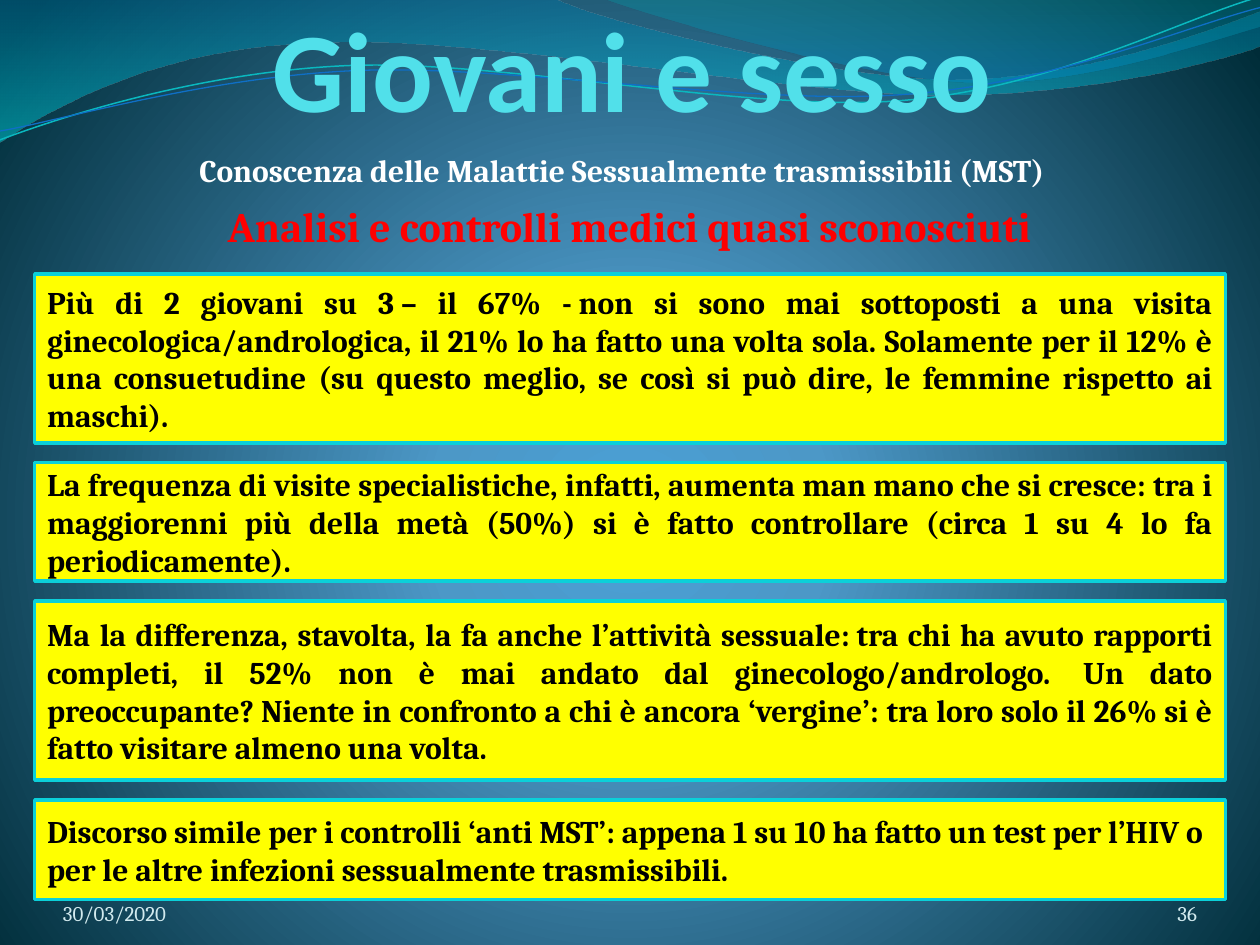
"""Build the slide on young people and medical check-ups."""
from math import cos, radians, sin
from lxml.etree import SubElement, fromstring
from pptx import Presentation
from pptx.dml.color import RGBColor
from pptx.enum.shapes import MSO_SHAPE as Shape
from pptx.enum.text import MSO_ANCHOR as Anchor, PP_ALIGN as Align
from pptx.oxml.ns import nsdecls, qn
from pptx.util import Pt

PX = 9144
INK = {"title": "51E0EA", "white": "FFFFFF", "red": "FF0000", "foot": "D1EAEE",
       "black": "000000", "box": "FFFF00", "edge": "0BD0D9"}

GLOW = [(0, "4AA0D6", 100), (25, "4C98C7", 100), (100, "002C38", 100)]
ROUND = ('<a:path path="circle"><a:fillToRect l="10000" t="110000" '
         'r="10000" b="100000"/></a:path>')
DOWN = '<a:lin ang="5400000" scaled="0"/>'

WAVES = [
    ([(0, 0), (440, -1), (476, 17, 664, 63, 758, 63), (853, 63, 958, 26, 1000, 9),
      (1001, 36), (983, 44, 870, 76, 746, 75), (622, 75, 382, 28, 257, 34),
      (129, 36, 46, 83, -1, 113), (0, 0)],
     [(0, "0074A1", 45), (100, "00C6CF", 55)]),
    ([(479, -1), (509, 11, 682, 62, 769, 65), (856, 69, 961, 32, 1000, 21),
      (1000, 0), (479, -1)],
     [(0, "00A1A9", 30), (80, "008BBF", 45)]),
]
TILT = -2.7
LINES = [
    ([(0, 111), (48, 93, 158, 57, 277, 52), (395, 47, 593, 89, 713, 80),
      (833, 71, 938, 15, 998, -2)], (499, 57.5), "0AB8BF", 0.85),
    ([(0, 104), (47, 96, 164, 61, 283, 56), (403, 51, 597, 84, 717, 75),
      (836, 67, 941, 21, 1000, 6)], (499.5, 59), "0F6FC6", 0.75),
]

PAD = (10, 5, 10, 5)
NONE = (0, 0, 0, 0)
LABELS = [
    ("Giovani e sesso", (98, 0, 810, 107), "Calibri", 64.8, "title", True,
     Align.CENTER, Anchor.BOTTOM, (0, 0, 2, 0)),
    ("Conoscenza delle Malattie Sessualmente trasmissibili (MST) ",
     (75, 115, 843, 40), "Cambria", 18, "white", True,
     Align.CENTER, Anchor.TOP, PAD),
    ("30/03/2020", (50, 695, 233, 40), "Cambria", 12, "foot", False,
     Align.LEFT, Anchor.BOTTOM, NONE),
    ("36", (867, 695, 83, 40), "Cambria", 12, "foot", False,
     Align.RIGHT, Anchor.BOTTOM, NONE),
    ("Analisi e controlli medici quasi sconosciuti", (43, 154.5, 913, 50),
     "Cambria", 24, "red", True, Align.CENTER, Anchor.TOP, PAD),
]

HARD = "~"
LEFT, TOP, WIDTH, GAP = 27.5, 217.5, 945, 15.75
BOXES = [
    (134, Align.JUSTIFY,
     "Più di 2 giovani su 3~– il 67% -~non si sono mai sottoposti a una visita "
     "ginecologica/andrologica, il 21% lo ha fatto una volta sola. Solamente per "
     "il 12% è una consuetudine (su questo meglio, se così si può dire, le femmine "
     "rispetto ai maschi). "),
    (94, Align.JUSTIFY,
     "La frequenza di visite specialistiche, infatti, aumenta man mano che si "
     "cresce: tra i maggiorenni più della metà (50%) si è fatto controllare "
     "(circa 1 su 4 lo fa periodicamente). "),
    (142, Align.JUSTIFY,
     "Ma la differenza, stavolta, la fa anche l’attività sessuale:~tra chi ha "
     "avuto rapporti completi, il 52% non è mai andato dal ginecologo/andrologo.~ "
     "Un dato preoccupante?~Niente in confronto a chi è ancora ‘vergine’: tra loro "
     "solo il 26%~si è fatto visitare almeno una volta. "),
    (79, Align.LEFT,
     "Discorso simile per i controlli ‘anti MST’:~appena 1 su 10 ha fatto un test "
     "per l’HIV o per le altre infezioni~sessualmente trasmissibili."),
]


def emu(*sizes):
    return [round(size * PX) for size in sizes]


def shade(owner, node, stops, course):
    owner.fill.background()
    marks = "".join(
        f'<a:gs pos="{pos * 1000}"><a:srgbClr val="{color}">'
        f'<a:alpha val="{alpha * 1000}"/></a:srgbClr></a:gs>'
        for pos, color, alpha in stops)
    old = next(node.iter(qn("a:noFill")))
    old.getparent().replace(old, fromstring(
        f'<a:gradFill {nsdecls("a")} rotWithShape="1">'
        f'<a:gsLst>{marks}</a:gsLst>{course}</a:gradFill>'))


def turn(route, pivot, angle):
    c, s = cos(radians(angle)), sin(radians(angle))
    px, py = pivot
    return [tuple(value for x, y in zip(leg[::2], leg[1::2])
                  for value in (px + (x - px) * c - (y - py) * s,
                                py + (x - px) * s + (y - py) * c))
            for leg in route]


def draw(shapes, route, close):
    first, *legs = route
    pen = shapes.build_freeform(*emu(*first))
    pen.add_line_segments([emu(*dot) for leg in legs
                           for dot in zip(leg[::2], leg[1::2])], close=close)
    shape = pen.convert_to_shape()
    shape.shadow.inherit = False
    steps = iter(list(shape.element.iter(qn("a:lnTo"))))
    for leg in legs:
        step = next(steps)
        if len(leg) == 6:
            step.addprevious(curve := SubElement(step.getparent(), qn("a:cubicBezTo")))
            for node in (step, next(steps), next(steps)):
                curve.append(node[0])
                node.getparent().remove(node)
    return shape


def write(shape, text, face, size, color, bold, align, anchor, pad):
    frame = shape.text_frame
    frame.word_wrap = True
    frame.vertical_anchor = anchor
    (frame.margin_left, frame.margin_top,
     frame.margin_right, frame.margin_bottom) = emu(*pad)
    para = frame.paragraphs[0]
    para.text = text.replace(HARD, chr(160))
    para.alignment = align
    font = para.font
    font.name, font.size, font.bold = face, Pt(size), bold
    font.color.rgb = RGBColor.from_string(INK[color])


def main():
    deck = Presentation()
    deck.slide_width, deck.slide_height = emu(1000, 750)
    slide = deck.slides.add_slide(deck.slide_layouts[6])
    shade(slide.background, slide.element, GLOW, ROUND)

    for route, stops in WAVES:
        wave = draw(slide.shapes, route, True)
        shade(wave, wave.element, stops, DOWN)
        wave.line.fill.background()
    group = slide.shapes.add_group_shape()
    for route, pivot, color, width in LINES:
        curve = draw(group.shapes, turn(route, pivot, -TILT), False)
        curve.rotation = TILT
        curve.fill.background()
        curve.line.color.rgb = RGBColor.from_string(color)
        curve.line.width = Pt(width)

    for text, place, *style in LABELS:
        write(slide.shapes.add_textbox(*emu(*place)), text, *style)

    top = TOP
    for height, align, text in BOXES:
        box = slide.shapes.add_shape(Shape.RECTANGLE, *emu(LEFT, top, WIDTH, height))
        box.shadow.inherit = False
        box.fill.solid()
        box.fill.fore_color.rgb = RGBColor.from_string(INK["box"])
        box.line.color.rgb = RGBColor.from_string(INK["edge"])
        box.line.width = Pt(2)
        write(box, text, "Cambria", 18, "black", True, align, Anchor.MIDDLE, PAD)
        top += height + GAP

    deck.save("out.pptx")


if __name__ == "__main__":
    main()
